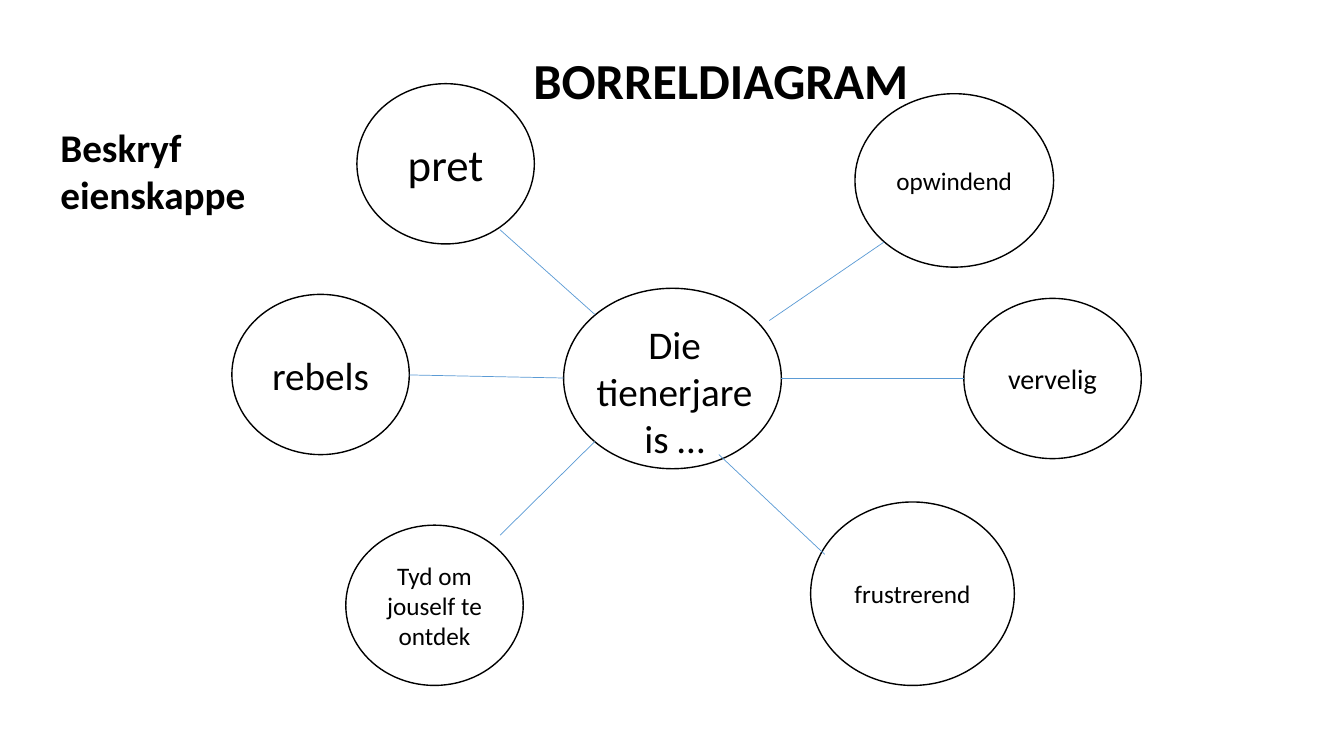
from dataclasses import dataclass

from lxml.etree import SubElement
from pptx import Presentation
from pptx.dml.color import RGBColor
from pptx.enum.shapes import MSO_CONNECTOR, MSO_SHAPE
from pptx.enum.text import MSO_ANCHOR, MSO_AUTO_SIZE, PP_ALIGN
from pptx.oxml.ns import qn
from pptx.util import Inches, Pt


@dataclass(frozen=True)
class Theme:
    font: str = "Calibri"
    ink: RGBColor = RGBColor(0, 0, 0)
    paper: RGBColor = RGBColor(255, 255, 255)
    link: RGBColor = RGBColor(0x5B, 0x9B, 0xD5)
    title: int = 36
    large: int = 32
    body: int = 28
    medium: int = 20
    small: int = 18


THEME = Theme()

# Bubbles: text, type size, left, top, width, height
BUBBLES = [
    ("", THEME.body, 5.59, 2.86, 2.16, 1.79),
    ("opwindend", THEME.small, 8.48, 0.93, 1.97, 1.72),
    ("rebels", THEME.body, 2.3, 2.92, 1.76, 1.59),
    ("vervelig", THEME.medium, 9.56, 2.96, 1.76, 1.59),
    ("frustrerend", THEME.small, 8.04, 4.98, 2.02, 1.82),
    ("Tyd om jouself te ontdek", THEME.small, 3.43, 5.21, 1.76, 1.59),
    ("pret", THEME.large, 3.54, 0.83, 1.76, 1.59),
]

# Links from the centre outwards: x1, y1, x2, y2
LINKS = [
    (7.63, 3.18, 8.77, 2.4),
    (7.75, 3.75, 9.56, 3.75),
    (7.13, 4.51, 8.18, 5.5),
    (5.9, 4.38, 4.96, 5.31),
    (5.59, 3.75, 4.06, 3.72),
    (5.9, 3.12, 4.96, 2.28),
]


def write(frame, text, size, bold=False, align=PP_ALIGN.LEFT):
    frame.word_wrap = True
    frame.text = text
    for para in frame.paragraphs:
        para.alignment = align
        font = para.font
        font.name, font.size, font.bold = THEME.font, Pt(size), bold
        font.color.rgb = THEME.ink


def add_title(slide, text, *box):
    title = slide.shapes.title
    title.left, title.top, title.width, title.height = map(Inches, box)
    frame = title.text_frame
    write(frame, text, THEME.title, bold=True)
    frame.auto_size = MSO_AUTO_SIZE.NONE
    frame.vertical_anchor = MSO_ANCHOR.MIDDLE
    frame.paragraphs[0].line_spacing = 0.9


def add_bubble(slide, text, size, *box):
    shape = slide.shapes.add_shape(
        MSO_SHAPE.FLOWCHART_CONNECTOR, *map(Inches, box))
    shape.shadow.inherit = False
    shape.fill.solid()
    shape.fill.fore_color.rgb = THEME.paper
    shape.line.color.rgb = THEME.ink
    shape.line.width = Pt(1)
    if text:
        write(shape.text_frame, text, size, align=PP_ALIGN.CENTER)
        shape.text_frame.vertical_anchor = MSO_ANCHOR.MIDDLE


def add_link(slide, *ends):
    link = slide.shapes.add_connector(
        MSO_CONNECTOR.STRAIGHT, *map(Inches, ends))
    link.line.color.rgb = THEME.link
    link.line.width = Pt(0.5)
    SubElement(link._element.spPr, qn("a:effectLst"))


def add_label(slide, text, box, **style):
    label = slide.shapes.add_textbox(*map(Inches, box))
    write(label.text_frame, text, THEME.body, **style)
    label.text_frame.auto_size = MSO_AUTO_SIZE.SHAPE_TO_FIT_TEXT


def main():
    deck = Presentation()
    deck.slide_width, deck.slide_height = Inches(13.33), Inches(7.5)
    slide = deck.slides.add_slide(deck.slide_layouts[5])

    add_title(slide, "BORRELDIAGRAM", 5.19, 0.24, 4.87, 1.18)

    # Bubbles and their links
    for bubble in BUBBLES:
        add_bubble(slide, *bubble)
    for ends in LINKS:
        add_link(slide, *ends)

    # Centre topic and side heading
    add_label(slide, "Die tienerjare\nis …", (5.73, 3.13, 1.92, 1.51),
              align=PP_ALIGN.CENTER)
    add_label(slide, "Beskryf eienskappe", (0.5, 1.17, 2.29, 1.04), bold=True)

    deck.save("out.pptx")


if __name__ == "__main__":
    main()
